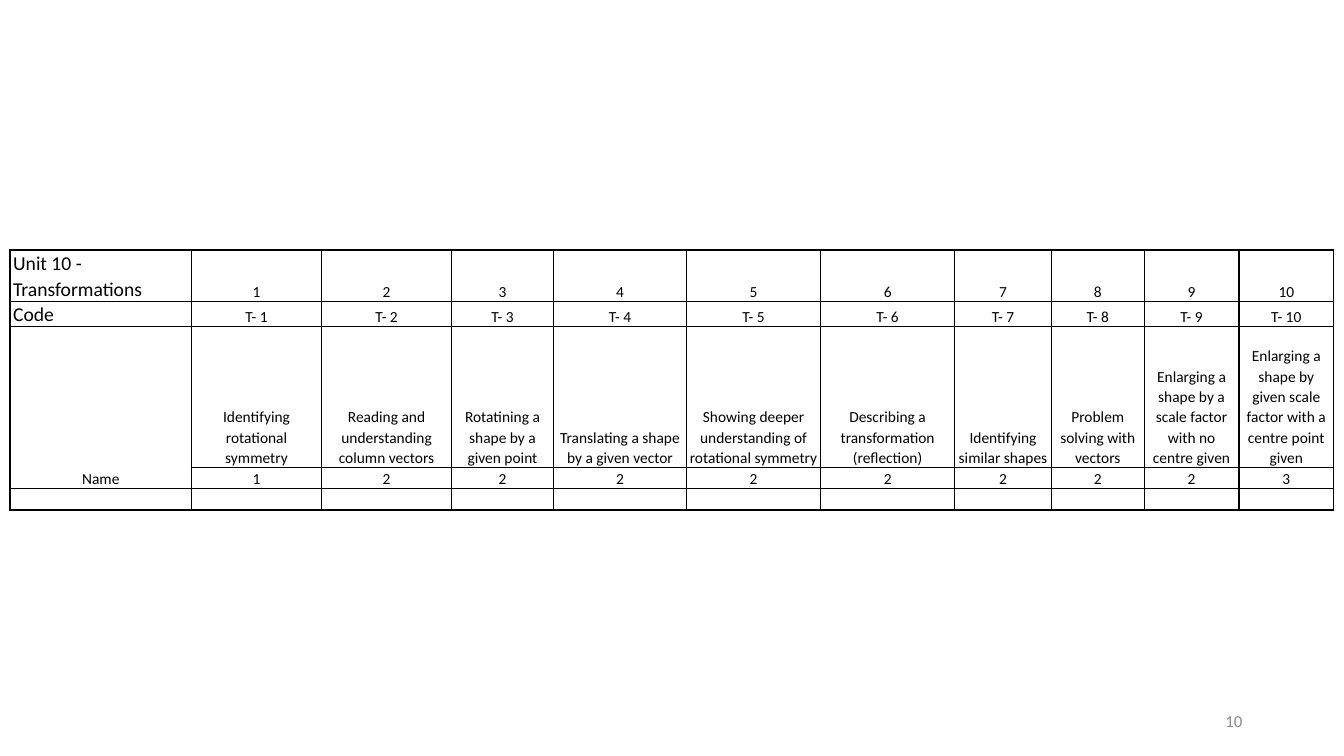
from lxml import etree
from pptx import Presentation
from pptx import util as u
from pptx.dml.color import RGBColor
from pptx.enum import text
from pptx.oxml.ns import qn

FONT = "Calibri"
BLACK, GREY = "000000", "8C8C8C"
SKILLS = [
    # skill, marks, column width
    ("Identifying rotational symmetry", 1, 1.29),
    ("Reading and understanding column vectors", 2, 1.29),
    ("Rotatining a shape by a given point", 2, 1.01),
    ("Translating a shape by a given vector", 2, 1.32),
    ("Showing deeper understanding of rotational symmetry", 2, 1.33),
    ("Describing a transformation (reflection)", 2, 1.33),
    ("Identifying similar shapes", 2, 0.96),
    ("Problem solving with vectors", 2, 0.92),
    ("Enlarging a shape by a scale factor with no centre given", 2, 0.94),
    ("Enlarging a shape by given scale factor with a centre point given", 3, 0.94),
]
HEADINGS = ["Unit 10 - Transformations", "Code", "Name", "", ""]
ROW_HEIGHTS = [0.51, 0.25, 1.4, 0.21, 0.21]
COLUMN_WIDTHS = [1.8] + [width for _, _, width in SKILLS]
PAGE_NUMBER = "10"


def write(frame, words, size, align, color=BLACK):
    frame.text = words
    para = frame.paragraphs[0]
    para.alignment = align
    for span in para.runs:
        span.font.name = FONT
        span.font.size = u.Pt(size)
        span.font.color.rgb = RGBColor.from_string(color)
    return para


def add_borders(cell, color=BLACK, points=1):
    properties = cell._tc.get_or_add_tcPr()
    for index, side in enumerate(("lnL", "lnR", "lnT", "lnB")):
        line = etree.Element(qn(f"a:{side}"), w=str(u.Pt(points)))
        fill = etree.SubElement(line, qn("a:solidFill"))
        etree.SubElement(fill, qn("a:srgbClr"), val=color)
        properties.insert(index, line)


def fill_cell(cell, words, size, align):
    cell.fill.background()
    cell.margin_left = cell.margin_right = u.Inches(0.03)
    cell.margin_top = cell.margin_bottom = 0
    cell.vertical_anchor = text.MSO_ANCHOR.BOTTOM
    para = write(cell.text_frame, words, size, align)
    para.line_spacing = 1.07
    if not words:  # keeps an empty row as low as the rows with text
        etree.SubElement(para._p, qn("a:endParaRPr"), sz=str(size * 100))
    add_borders(cell)


def add_skill_table(page):
    rows = [[heading] for heading in HEADINGS]
    for number, (skill, marks, _) in enumerate(SKILLS, 1):
        column = (str(number), f"T- {number}", skill, str(marks), "")
        for row, words in zip(rows, column):
            row.append(words)

    table = page.shapes.add_table(
        len(rows), len(COLUMN_WIDTHS), u.Inches(0.1), u.Inches(2.48),
        u.Inches(sum(COLUMN_WIDTHS)), u.Inches(sum(ROW_HEIGHTS))).table
    table.first_row = table.horz_banding = False
    for column, width in zip(table.columns, COLUMN_WIDTHS):
        column.width = u.Inches(width)
    for row, height in zip(table.rows, ROW_HEIGHTS):
        row.height = u.Inches(height)

    for r, row in enumerate(rows):
        for c, words in enumerate(row):
            is_heading = c == 0 and r < 2
            align = text.PP_ALIGN.LEFT if is_heading else text.PP_ALIGN.CENTER
            fill_cell(table.cell(r, c), words, 14 if is_heading else 11, align)
    table.cell(2, 0).merge(table.cell(3, 0))


def add_page_number(page):
    box = page.shapes.add_textbox(
        u.Inches(9.42), u.Inches(6.95), u.Inches(3), u.Inches(0.4))
    box.text_frame.word_wrap = True
    box.text_frame.vertical_anchor = text.MSO_ANCHOR.MIDDLE
    write(box.text_frame, PAGE_NUMBER, 12, text.PP_ALIGN.RIGHT, GREY)


def main():
    deck = Presentation()
    deck.slide_width, deck.slide_height = u.Inches(13.33), u.Inches(7.5)
    page = deck.slides.add_slide(deck.slide_layouts[6])
    add_page_number(page)
    add_skill_table(page)
    deck.save("out.pptx")


if __name__ == "__main__":
    main()
